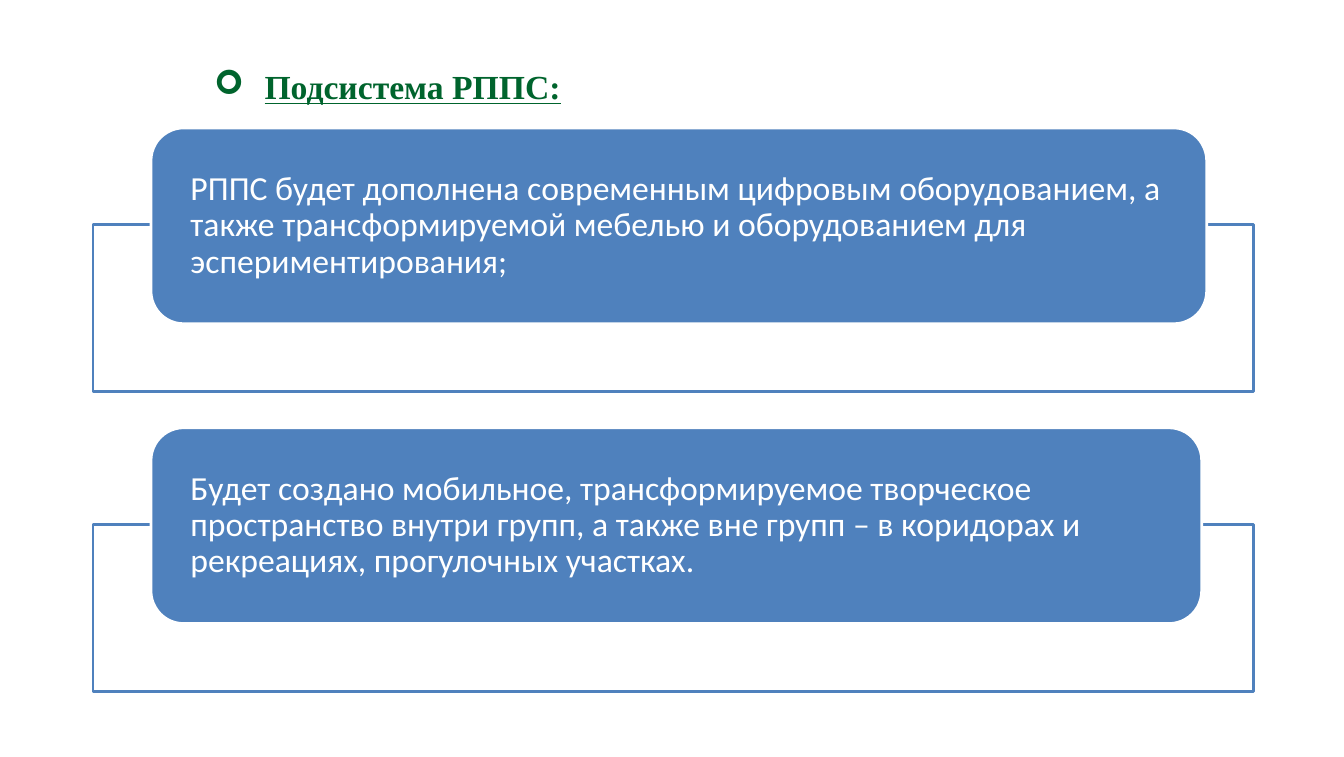
import pptx
import pptx.dml.color
import pptx.enum.shapes
import pptx.enum.text
import pptx.oxml.ns
import pptx.util
from lxml import etree

PX = 914400 / 101
GREEN = pptx.dml.color.RGBColor(0x00, 0x64, 0x2D)
BLUE = pptx.dml.color.RGBColor(0x4F, 0x81, 0xBD)
WHITE = pptx.dml.color.RGBColor(0xFF, 0xFF, 0xFF)

PLANS = [
    ("РППС будет дополнена современным цифровым оборудованием, а также "
     "трансформируемой мебелью и оборудованием для эспериментирования;", 1056),
    ("Будет создано мобильное, трансформируемое творческое пространство внутри групп, "
     "а также вне групп – в коридорах и рекреациях, прогулочных участках.", 1051),
]


def emu(pixels):
    """Turn px into EMU."""
    return pptx.util.Emu(round(pixels * PX))


def add_run(paragraph, text, font_name, color):
    """Add a 24 pt run and return its font."""
    run = paragraph.add_run()
    run.text = text
    run.font.name = font_name
    run.font.size = pptx.util.Pt(24)
    run.font.color.rgb = color
    return run.font


def add_panel(slide, preset, box, fill, line):
    """Add a preset shape with a solid fill and a 2 pt line."""
    shape = slide.shapes.add_shape(preset, *map(emu, box))
    shape.shadow.inherit = False
    shape.fill.solid()
    shape.fill.fore_color.rgb = fill
    shape.line.color.rgb = line
    shape.line.width = pptx.util.Pt(2)
    return shape


def place_title(slide, left, top, width, height):
    """Place the underlined heading with its arrow bullet."""
    title = slide.shapes.title
    title.left, title.top, title.width, title.height = map(emu, (left, top, width, height))
    frame = title.text_frame
    frame.word_wrap = True
    frame.auto_size = pptx.enum.text.MSO_AUTO_SIZE.NONE
    frame.vertical_anchor = pptx.enum.text.MSO_ANCHOR.TOP
    paragraph = frame.paragraphs[0]
    paragraph.alignment = pptx.enum.text.PP_ALIGN.LEFT
    properties = paragraph._p.get_or_add_pPr()
    indent = pptx.util.Inches(0.5)
    properties.set("marL", str(indent))
    properties.set("indent", str(-indent))
    bullet_font = etree.SubElement(properties, pptx.oxml.ns.qn("a:buFont"))
    bullet_font.set("typeface", "Wingdings")
    bullet_font.set("charset", "2")
    bullet = etree.SubElement(properties, pptx.oxml.ns.qn("a:buChar"))
    bullet.set("char", "➢")
    font = add_run(paragraph, "Подсистема РППС:", "Times New Roman", GREEN)
    font.bold = True
    font.underline = True


def add_plan(slide, left, top, width, text, card_width):
    """Add a rounded card that overlaps the top of an outlined frame."""
    shapes = pptx.enum.shapes.MSO_SHAPE
    add_panel(slide, shapes.RECTANGLE, (left, top + 97, width, 167), WHITE, BLUE)
    card = add_panel(slide, shapes.ROUNDED_RECTANGLE,
                     (left + 58, top, card_width, 196), BLUE, WHITE)
    frame = card.text_frame
    frame.word_wrap = True
    frame.vertical_anchor = pptx.enum.text.MSO_ANCHOR.MIDDLE
    frame.margin_left = frame.margin_right = emu(30)
    frame.margin_top = frame.margin_bottom = 0
    paragraph = frame.paragraphs[0]
    paragraph.alignment = pptx.enum.text.PP_ALIGN.LEFT
    paragraph.line_spacing = 0.9
    add_run(paragraph, text, "Calibri", WHITE)


def main():
    """Build the slide and save it."""
    presentation = pptx.Presentation()
    presentation.slide_width = pptx.util.Inches(13.31)
    presentation.slide_height = pptx.util.Inches(7.5)
    slide = presentation.slides.add_slide(presentation.slide_layouts.get_by_name("Title Only"))
    place_title(slide, 204, 61, 1049, 82)
    for index, (text, card_width) in enumerate(PLANS):
        add_plan(slide, 93, 128 + 300 * index, 1161, text, card_width)
    presentation.save("out.pptx")


if __name__ == "__main__":
    main()
